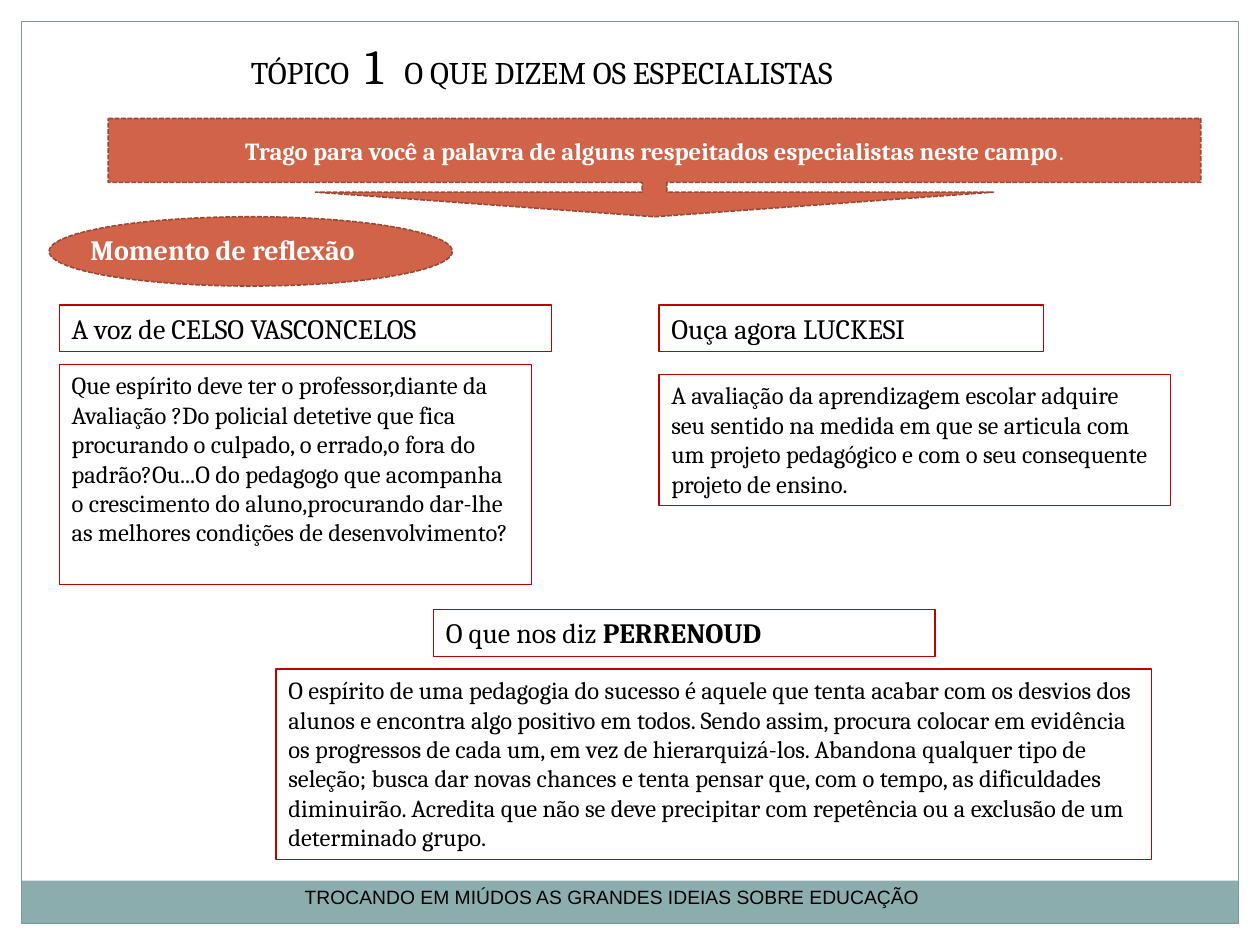
import pptx
import pptx.util
import pptx.dml.color
import pptx.enum.dml
import pptx.enum.shapes
import pptx.enum.text

Inch, Pt = pptx.util.Inches, pptx.util.Pt
Kind = pptx.enum.shapes.MSO_SHAPE
Align = pptx.enum.text.PP_ALIGN
Anchor = pptx.enum.text.MSO_ANCHOR
Fit = pptx.enum.text.MSO_AUTO_SIZE
Dash = pptx.enum.dml.MSO_LINE

COLORS = {"band": "8CADAE", "frame": "7C999A", "rust": "D16349",
          "edge": "9B4936", "red": "C00000", "white": "FFFFFF", "black": "000000"}
WIDE, HIGH = 10, 7.5
LEFT, RIGHT = 0.47, 5.23      # the two columns
HEAD, ROW = 0.37, 2.42        # height of a heading, top of the upper pair
HEAD_SIZE, BODY_SIZE = 16, 14

CELSO = ("Que espírito deve ter o professor,diante da Avaliação ?Do policial detetive "
         "que fica procurando o culpado, o errado,o fora do padrão?Ou...O do pedagogo "
         "que acompanha o crescimento do aluno,procurando dar-lhe as melhores condições "
         "de desenvolvimento?")
LUCKESI = ("A avaliação da aprendizagem escolar adquire seu sentido na medida em que se "
           "articula com um projeto pedagógico e com o seu consequente projeto de ensino.")
PERRENOUD = ("O espírito de uma pedagogia do sucesso é aquele que tenta acabar com os "
             "desvios dos alunos e encontra algo positivo em todos. Sendo assim, procura "
             "colocar em evidência os progressos de cada um, em vez de hierarquizá-los. "
             "Abandona qualquer tipo de seleção; busca dar novas chances e tenta pensar "
             "que, com o tempo, as dificuldades diminuirão. Acredita que não se deve "
             "precipitar com repetência ou a exclusão de um determinado grupo.")


def tint(name):
    return pptx.dml.color.RGBColor.from_string(COLORS[name])


def apply(item, values):
    for name, value in values.items():
        setattr(item, name, value)


def write(shape, runs, color="black", align=Align.LEFT, anchor=Anchor.TOP):
    """Fill a shape with runs, each a text and its font values."""
    frame = shape.text_frame
    apply(frame, {"word_wrap": True, "auto_size": Fit.NONE, "vertical_anchor": anchor})
    para = frame.paragraphs[0]
    para.alignment = align
    for text, font in runs:
        run = para.add_run()
        run.text = text
        apply(run.font, {"name": "Cambria", **font})
        run.font.color.rgb = tint(color)
    return para


def draw(slide, kind, box, fill=None, line=None, width=0.75, dash=None):
    shape = slide.shapes.add_shape(kind, *map(Inch, box))
    shape.shadow.inherit = False
    if fill:
        shape.fill.solid()
        shape.fill.fore_color.rgb = tint(fill)
    else:
        shape.fill.background()
    if line:
        shape.line.color.rgb = tint(line)
        apply(shape.line, {"width": Pt(width), "dash_style": dash})
    else:
        shape.line.fill.background()
    return shape


def badge(slide, kind, box):
    return draw(slide, kind, box, "rust", "edge", 0.9, Dash.SQUARE_DOT)


def panel(slide, box, size, *parts):
    """Red outlined box; a second part is set in bold."""
    runs = [(text, {"size": Pt(size), "bold": n > 0}) for n, text in enumerate(parts)]
    write(draw(slide, Kind.RECTANGLE, box, line="red"), runs)


def label(slide, box, text, font, color="black"):
    write(slide.shapes.add_textbox(*map(Inch, box)), [(text, font)], color)


def title(slide):
    shape = slide.shapes.title
    apply(shape, dict(zip(("left", "top", "width", "height"),
                          map(Inch, (1.89, 0.23, 6.63, 0.57)))))
    small, large = {"size": Pt(18)}, {"size": Pt(28)}
    para = write(shape, [("TÓPICO", small), (" 1 ", large),
                         ("O QUE DIZEM OS ESPECIALISTAS", small)])
    # Wider letter spacing sets the number apart
    para.runs[1].font._element.set("spc", "300")


def main():
    deck = pptx.Presentation()
    apply(deck, {"slide_width": Inch(WIDE), "slide_height": Inch(HIGH)})
    slide = deck.slides.add_slide(deck.slide_layouts[5])

    # Frame and footer band
    edge = 0.17
    draw(slide, Kind.RECTANGLE, (edge, 6.99, WIDE - 2 * edge, 0.34), "band")
    draw(slide, Kind.RECTANGLE, (edge, edge, WIDE - 2 * edge, HIGH - 2 * edge), line="frame")

    title(slide)

    # Callout
    call = badge(slide, Kind.DOWN_ARROW_CALLOUT, (0.86, 0.94, 8.67, 0.78))
    for n, value in enumerate((0.25, 3.45, 0.25, 0.65)):
        call.adjustments[n] = value
    size = Pt(BODY_SIZE)
    write(call, [("Trago para você a palavra de alguns respeitados especialistas neste campo",
                  {"size": size, "bold": True}), (".", {"size": size, "bold": False})],
          "white", Align.CENTER, Anchor.MIDDLE)

    # Reflection badge
    badge(slide, Kind.OVAL, (0.39, 1.72, 3.2, 0.55))
    label(slide, (0.62, 1.8, 2.97, HEAD), "Momento de reflexão",
          {"size": Pt(HEAD_SIZE), "bold": True}, "white")

    # Headings and quotes
    panel(slide, (LEFT, ROW, 3.91, HEAD), HEAD_SIZE, "A voz de CELSO VASCONCELOS")
    panel(slide, (LEFT, 2.89, 3.75, 1.75), BODY_SIZE, CELSO)
    panel(slide, (RIGHT, ROW, 3.05, HEAD), HEAD_SIZE, "Ouça agora LUCKESI")
    panel(slide, (RIGHT, 2.97, 4.06, 1.04), BODY_SIZE, LUCKESI)
    panel(slide, (3.44, 4.84, 3.98, HEAD), HEAD_SIZE, "O que nos diz ", "PERRENOUD")
    panel(slide, (2.19, 5.31, 6.95, 1.51), BODY_SIZE, PERRENOUD)

    # Footer
    label(slide, (2.32, 6.98, 7.68, 0.29),
          "TROCANDO EM MIÚDOS AS GRANDES IDEIAS SOBRE EDUCAÇÃO",
          {"name": "Arial", "size": Pt(11)})

    deck.save("out.pptx")


if __name__ == "__main__":
    main()
